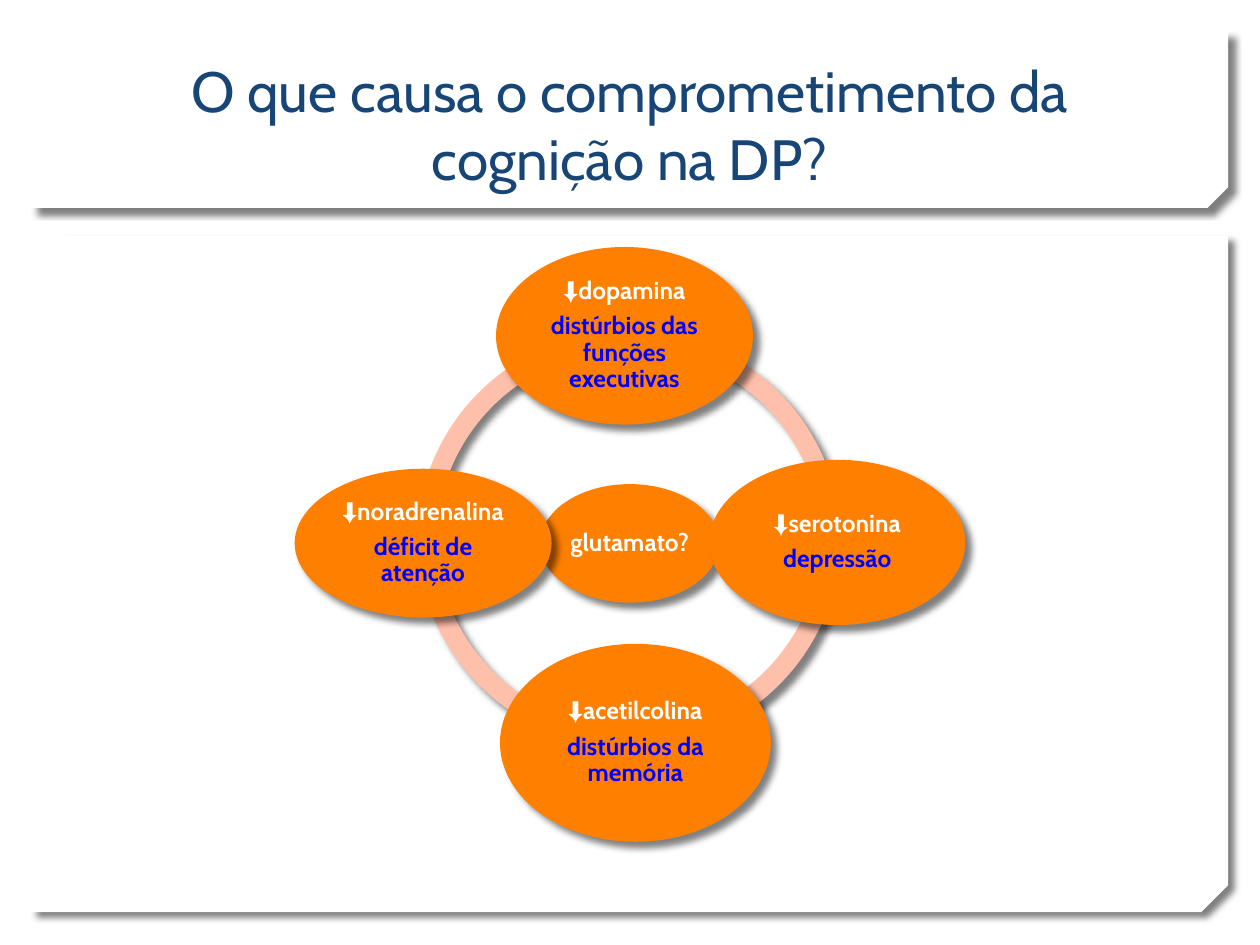
from lxml.etree import SubElement
from pptx import Presentation
from pptx.dml.color import RGBColor
from pptx.enum.shapes import MSO_SHAPE
from pptx.enum.text import MSO_ANCHOR, MSO_AUTO_SIZE, PP_ALIGN
from pptx.oxml.ns import qn
from pptx.util import Cm, Pt

COLORS = {
    "panel": "FFFFFF",
    "title": "174576",
    "ring": "FFC0AB",
    "node": "FF7F01",
    "name": "FFFFFF",
    "effect": "0000FF",
    "shadow": "000000",
}
FONT = "Cabin"
ARROW = "⬇"
HEADER_BOX = (0.63, 0.63, 24.13, 3.56)
BODY_BOX = (0.63, 4.75, 24.13, 13.64)
DIAGRAM_BOX = (5.94, 4.98, 13.52, 11.99)
RING_SIZE = 8.56
RING_LEFT = 2.46
UPPER_TOP, LOWER_TOP = 1.68, 1.52
ARCS = [
    (UPPER_TOP, 180, 268.75),
    (LOWER_TOP, 88.3, 178),
    (LOWER_TOP, 2, 88.35),
    (UPPER_TOP, 268.75, 0),
]
NODES = [
    ((4.95, 4.78, 3.61, 2.39), "glutamato?", None),
    ((4.06, 0, 5.18, 3.58), "dopamina", "distúrbios das funções executivas"),
    ((8.36, 4.29, 5.16, 3.33), "serotonina", "depressão"),
    ((4.14, 8, 5.46, 3.99), "acetilcolina", "distúrbios da memória"),
    ((0, 4.47, 5.18, 3), "noradrenalina", "déficit de atenção"),
]


def color(name):
    """Return the palette colour with the given name."""
    return RGBColor.from_string(COLORS[name])


def add_shadowed_shape(slide, kind, box, fill, adjustments=()):
    """Add a borderless filled shape with the soft diagonal shadow."""
    shape = slide.shapes.add_shape(kind, *(Cm(length) for length in box))
    for index, value in enumerate(adjustments):
        shape.adjustments[index] = value
    shape.fill.solid()
    shape.fill.fore_color.rgb = color(fill)
    shape.line.fill.background()
    shape.shadow.inherit = False
    effects = shape._element.spPr.find(qn("a:effectLst"))
    shadow = SubElement(effects, qn("a:outerShdw"), blurRad=str(Pt(4)),
                        dist=str(Pt(5)), dir="2700000", algn="tl", rotWithShape="0")
    shade = SubElement(shadow, qn("a:srgbClr"), val=COLORS["shadow"])
    SubElement(shade, qn("a:alpha"), val="50000")
    return shape


def add_panel(slide, box, snip):
    """Add a white panel with its lower right corner cut."""
    panel = add_shadowed_shape(slide, MSO_SHAPE.SNIP_2_DIAG_RECTANGLE, box, "panel", (0, snip))
    panel._element.spPr.xfrm.set("flipV", "1")


def format_run(run, size, fill, font=FONT, bold=False):
    """Set the font, size and colour of a run."""
    run.font.name = font
    run.font.size = Pt(size)
    run.font.bold = bold
    run.font.color.rgb = color(fill)


def add_header(slide, box, text):
    """Add the header panel and place the title over it."""
    add_panel(slide, box, 0.117)
    left, top, width, height = box
    title = slide.shapes.title
    title.left, title.top = Cm(left + 1.53), Cm(top + 0.18)
    title.width, title.height = Cm(width - 3.06), Cm(height - 0.38)
    slide.shapes._spTree.append(title._element)
    frame = title.text_frame
    frame.text = text
    frame.auto_size = MSO_AUTO_SIZE.NONE
    frame.vertical_anchor = MSO_ANCHOR.BOTTOM
    frame.paragraphs[0].alignment = PP_ALIGN.CENTER
    format_run(frame.paragraphs[0].runs[0], 32.4, "title")


def add_node(slide, box, name, effect):
    """Add an ellipse naming a neurotransmitter and the effect of its decline."""
    node = add_shadowed_shape(slide, MSO_SHAPE.OVAL, box, "node")
    frame = node.text_frame
    frame.word_wrap = True
    frame.vertical_anchor = MSO_ANCHOR.MIDDLE
    frame.margin_left = frame.margin_right = Cm(0.05)
    frame.margin_top = frame.margin_bottom = Cm(0.05)
    pieces = [(name, FONT, "name")]
    if effect:
        pieces.insert(0, (ARROW, "Arial", "name"))
    for text, font, fill in pieces:
        run = frame.paragraphs[0].add_run()
        run.text = text
        format_run(run, 14, fill, font, True)
    if effect:
        paragraph = frame.add_paragraph()
        paragraph.text = effect
        format_run(paragraph.runs[0], 14, "effect", bold=True)
    for paragraph in frame.paragraphs:
        paragraph.alignment = PP_ALIGN.CENTER
        paragraph.line_spacing = 0.9
        paragraph.space_after = Pt(5)


def add_diagram(slide, box):
    """Add the ring of arcs and the nodes on it, relative to the box."""
    left, top = box[:2]
    for arc_top, start, end in ARCS:
        arc_box = (left + RING_LEFT, top + arc_top, RING_SIZE, RING_SIZE)
        add_shadowed_shape(slide, MSO_SHAPE.BLOCK_ARC, arc_box, "ring",
                           (start * 0.6, end * 0.6, 0.046))
    for (x, y, width, height), name, effect in NODES:
        add_node(slide, (left + x, top + y, width, height), name, effect)


def main():
    """Build and save the presentation."""
    presentation = Presentation()
    presentation.slide_width, presentation.slide_height = Cm(25.4), Cm(19.05)
    slide = presentation.slides.add_slide(presentation.slide_layouts[5])
    add_panel(slide, BODY_BOX, 0.04)
    add_header(slide, HEADER_BOX, "O que causa o comprometimento da cognição na DP?")
    add_diagram(slide, DIAGRAM_BOX)
    presentation.save("out.pptx")


if __name__ == "__main__":
    main()
